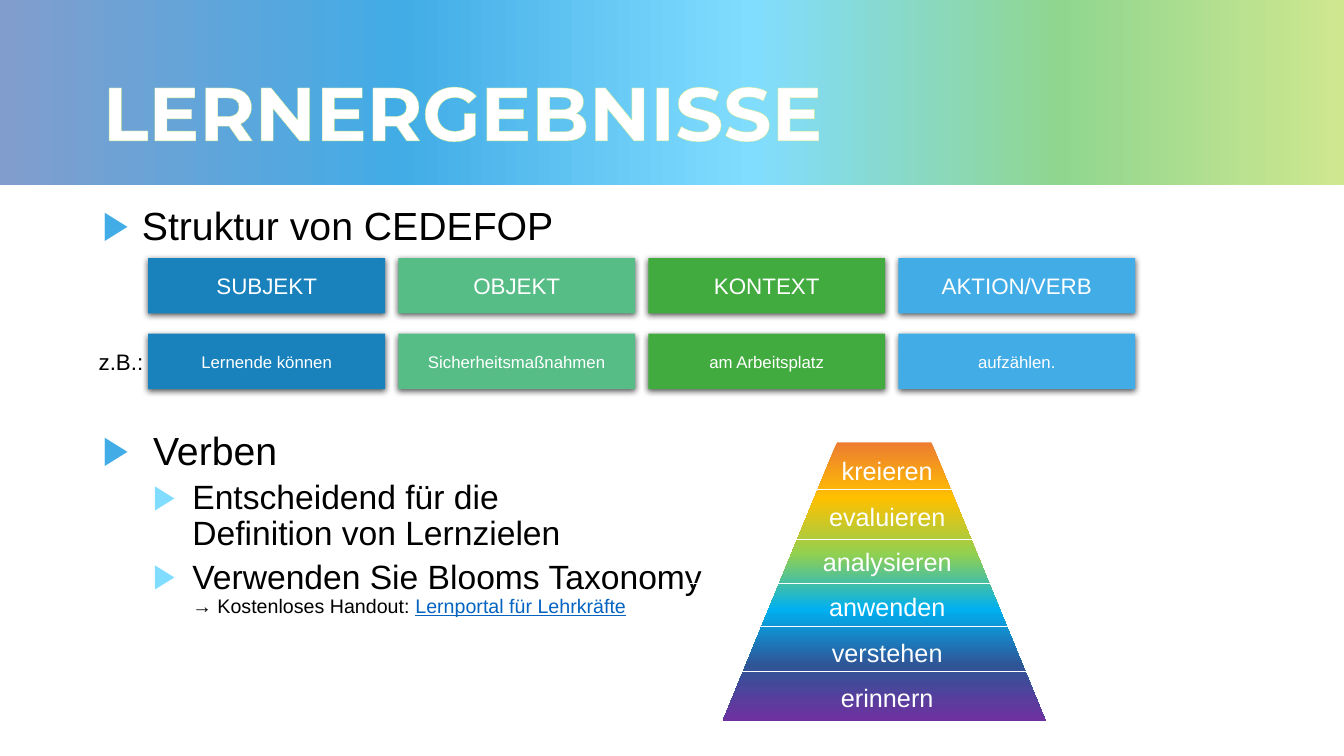
from lxml import etree
from pptx import Presentation
from pptx import util as u
from pptx.dml.color import RGBColor
from pptx.enum import shapes, text
from pptx.oxml import parse_xml

NS = 'xmlns:a="http://schemas.openxmlformats.org/drawingml/2006/main"'
HUES = {
    "white": "FFFFFF", "black": "000000", "link": "0563C1", "lime": "BFE38F",
    "navy": "1982BD", "mint": "57BD87", "green": "42AB3F", "blue": "42ACE6",
    "sky": "81DDFF",
}
BANNER = [(0, "819DCD"), (30, "42ACE6"), (56, "81DDFF"), (79, "90D68F"), (100, "CFE78F")]
BLOOM = [(0, "ED7D31"), (20, "FFC000"), (40, "92D050"), (60, "00B0F0"), (80, "2F5597"), (100, "7030A0")]
CARDS = [
    ("SUBJEKT", "Lernende können", "navy"),
    ("OBJEKT", "Sicherheitsmaßnahmen", "mint"),
    ("KONTEXT", "am Arbeitsplatz", "green"),
    ("AKTION/VERB", "aufzählen.", "blue"),
]
STEPS = ["kreieren", "evaluieren", "analysieren", "anwenden", "verstehen", "erinnern"]
RULES = [(6.84, 4.85), (6.84, 5.35), (6.84, 5.79), (6.99, 6.21), (6.99, 6.66)]


class Deck:
    def __init__(self):
        self.prs = Presentation()
        self.prs.slide_width = u.Inches(13.33)
        self.prs.slide_height = u.Inches(7.5)
        self.slide = self.prs.slides.add_slide(self.prs.slide_layouts[5])
        self.items = self.slide.shapes
        self.face = "Arial"

    def style(self, run, size, hue="black", face=None):
        run.font.size = u.Pt(size)
        run.font.name = face or self.face
        run.font.color.rgb = RGBColor.from_string(HUES[hue])

    def title(self, words, *box):
        head = self.items.title
        head.left, head.top, head.width, head.height = map(u.Inches, box)
        frame = head.text_frame
        frame.text = words
        frame.auto_size = text.MSO_AUTO_SIZE.NONE
        frame.vertical_anchor = text.MSO_ANCHOR.MIDDLE
        para = frame.paragraphs[0]
        para.alignment = text.PP_ALIGN.LEFT
        para.line_spacing = 0.9
        run = para.runs[0]
        self.style(run, 54, "white", "Montserrat")
        run.font.bold = True
        edge = parse_xml(f'<a:ln {NS} w="9525"><a:solidFill><a:srgbClr val="{HUES["lime"]}"/></a:solidFill></a:ln>')
        run.font._element.insert(0, edge)

    def shape(self, kind, *box):
        item = self.items.add_shape(kind, *map(u.Inches, box))
        item.shadow.inherit = False
        item.line.fill.background()
        return item

    def blend(self, kind, box, stops, angle):
        item = self.shape(kind, *box)
        marks = "".join(f'<a:gs pos="{p * 1000}"><a:srgbClr val="{c}"/></a:gs>' for p, c in stops)
        fill = parse_xml(f'<a:gradFill {NS} rotWithShape="1"><a:gsLst>{marks}</a:gsLst>'
                         f'<a:lin ang="{angle * 60000}" scaled="0"/></a:gradFill>')
        item._element.spPr.find("{*}prstGeom").addnext(fill)
        return item

    def card(self, words, size, hue, *box):
        item = self.shape(shapes.MSO_SHAPE.RECTANGLE, *box)
        item.fill.solid()
        item.fill.fore_color.rgb = RGBColor.from_string(HUES[hue])
        glow = parse_xml(f'<a:outerShdw {NS} blurRad="57150" dist="19050" dir="5400000" algn="ctr" rotWithShape="0">'
                         f'<a:srgbClr val="{HUES["black"]}"><a:alpha val="63000"/></a:srgbClr></a:outerShdw>')
        item._element.spPr.find("{*}effectLst").append(glow)
        frame = item.text_frame
        frame.text = words
        frame.vertical_anchor = text.MSO_ANCHOR.MIDDLE
        para = frame.paragraphs[0]
        para.alignment = text.PP_ALIGN.CENTER
        self.style(para.runs[0], size, "white")

    def box(self, lines, size, hue, *place):
        frame = self.items.add_textbox(*map(u.Inches, place)).text_frame
        frame.word_wrap = True
        frame.text = "\n".join(lines)
        for para in frame.paragraphs:
            for run in para.runs:
                self.style(run, size, hue)
        return frame.paragraphs

    def bullet(self, para, size, hue, left, hang, gap=0):
        props = para._p.get_or_add_pPr()
        props.set("marL", str(u.Inches(left)))
        props.set("indent", str(-u.Inches(hang)))
        for part in (f'<a:buClr {NS}><a:srgbClr val="{HUES[hue]}"/></a:buClr>',
                     f'<a:buFont {NS} typeface="{self.face}"/>',
                     f'<a:buChar {NS} char="▶"/>'):
            props.append(parse_xml(part))
        para.line_spacing = 0.9
        para.space_before = u.Pt(gap)
        for run in para.runs:
            self.style(run, size)

    def rule(self, left, top, wide):
        ends = map(u.Inches, (left, top, left + wide, top))
        line = self.items.add_connector(shapes.MSO_CONNECTOR.STRAIGHT, *ends)
        line.line.color.rgb = RGBColor.from_string(HUES["white"])
        line.line.width = u.Pt(0.5)
        etree.SubElement(line._element.spPr, "{http://schemas.openxmlformats.org/drawingml/2006/main}effectLst")


def main():
    deck = Deck()
    band = deck.blend(shapes.MSO_SHAPE.RECTANGLE, (0, 0, 13.33, 1.84), BANNER, 0)
    deck.items._spTree.insert(2, band._element)
    deck.title("LERNERGEBNISSE", 0.92, 0.32, 11.5, 1.67)

    lead = deck.box(["Struktur von CEDEFOP"], 28, "black", 0.92, 2, 11.5, 0.5)
    deck.bullet(lead[0], 28, "blue", 0.39, 0.39)

    verbs = deck.box(["Verben", "Entscheidend für die\vDefinition von Lernzielen",
                      "Verwenden Sie Blooms Taxonomy\v"], 28, "black", 0.92, 4.23, 6.3, 2.1)
    for words, hue in (("→ Kostenloses Handout: ", "black"), ("Lernportal für Lehrkräfte", "link")):
        verbs[2].add_run().text = words
    deck.bullet(verbs[0], 28, "blue", 0.5, 0.5)
    for para in verbs[1:]:
        deck.bullet(para, 24, "sky", 0.89, 0.39, 5)
    note, link = verbs[2].runs[1:]
    deck.style(note, 14)
    deck.style(link, 14, "link")
    link.font.underline = True

    for col, (part, sample, hue) in enumerate(CARDS):
        left = 1.47 + 2.48 * col
        deck.card(part, 16, hue, left, 2.56, 2.35, 0.55)
        deck.card(sample, 12, hue, left, 3.31, 2.35, 0.55)
    deck.box(["z.B.:"], 16, "black", 0.88, 3.4, 0.95, 0.37)

    cone = deck.blend(shapes.MSO_SHAPE.TRAPEZOID, (7.17, 4.39, 3.2, 2.76), BLOOM, 90)
    cone.adjustments[0] = 0.41
    for para in deck.box(STEPS, 18, "white", 7.52, 4.32, 2.56, 2.78):
        para.alignment = text.PP_ALIGN.CENTER
        para.line_spacing = 1.5
    for left, top in RULES:
        deck.rule(left, top, 3.56)
    deck.prs.save("out.pptx")


if __name__ == "__main__":
    main()
